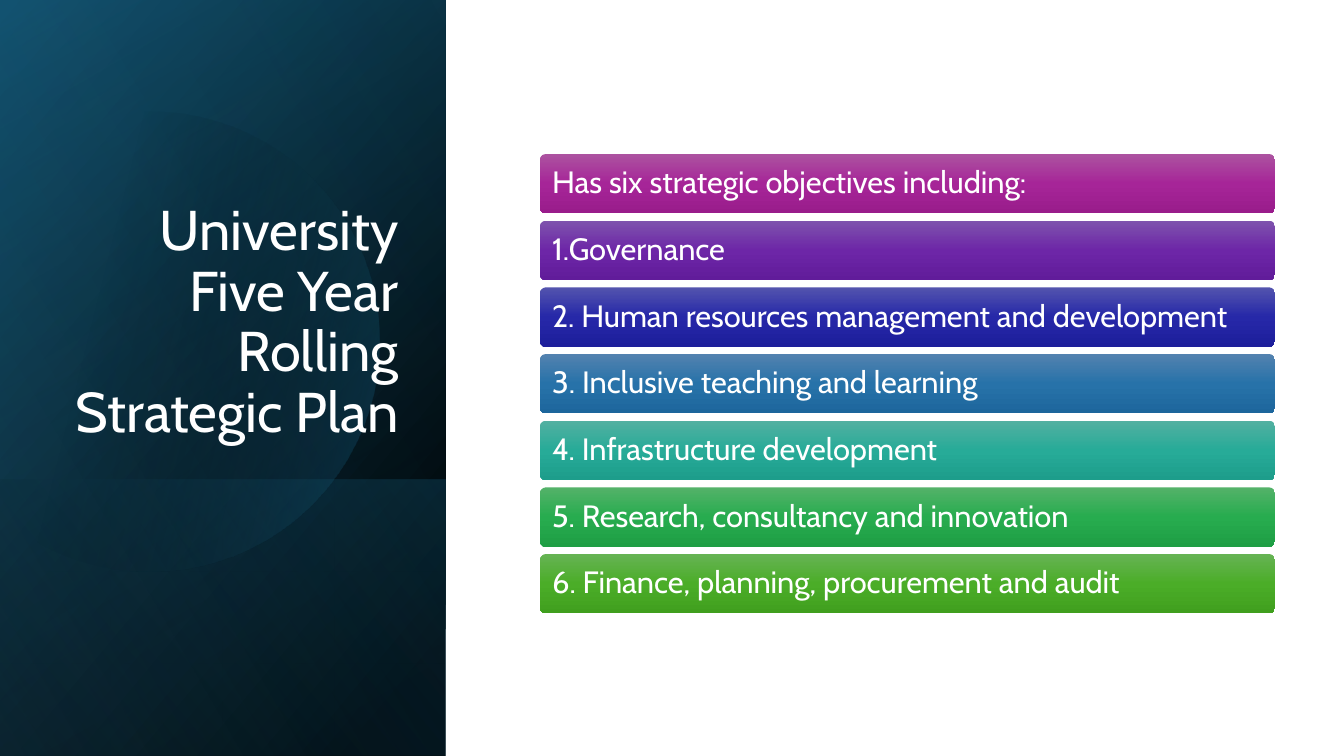
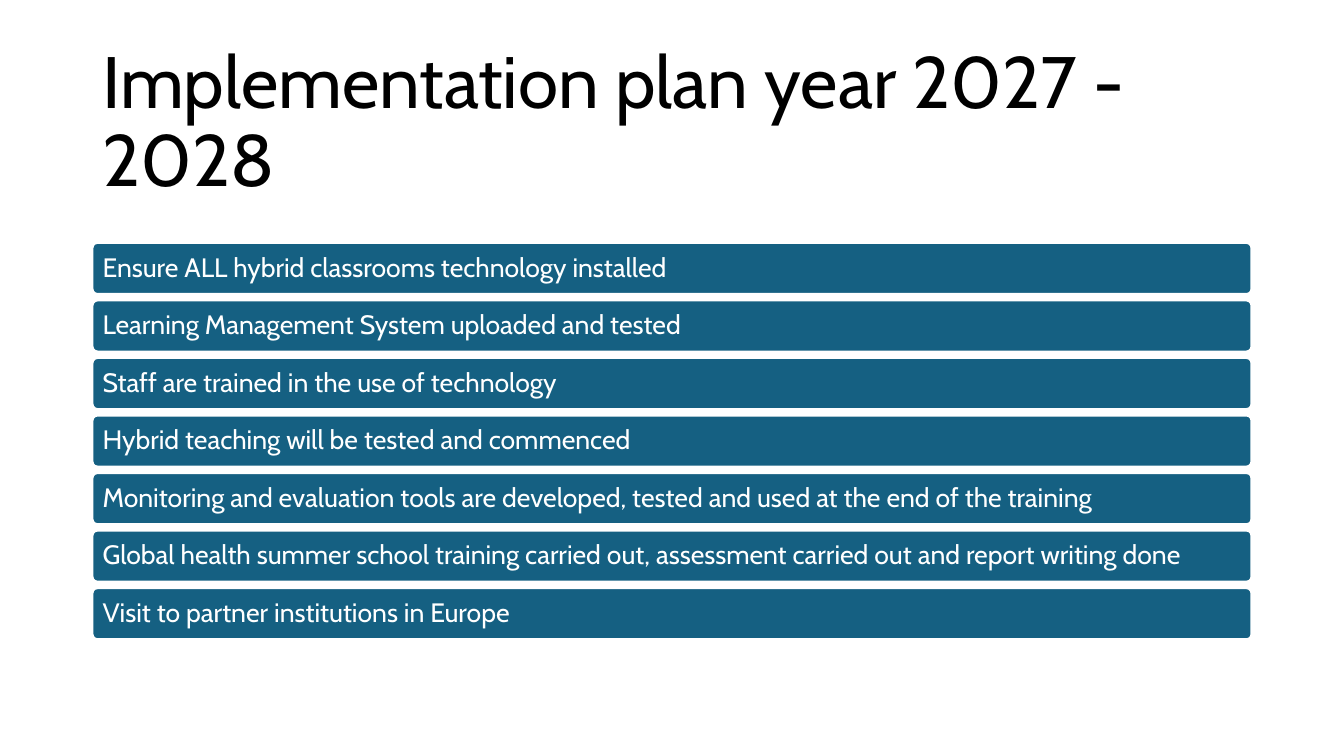
from dataclasses import dataclass
from math import acos, cos, sin
from typing import NamedTuple, Optional

from lxml.etree import SubElement
from pptx import Presentation
from pptx.dml.color import RGBColor
from pptx.enum.shapes import MSO_SHAPE as Preset
from pptx.enum.text import MSO_ANCHOR as Anchor, MSO_AUTO_SIZE as AutoSize, PP_ALIGN as Align
from pptx.oxml.ns import qn
from pptx.util import Cm, Pt


# Theme
@dataclass(frozen=True)
class Theme:
    font: str = "Cabin"
    white: str = "FFFFFF"
    black: str = "000000"
    teal: str = "156082"
    deep_teal: str = "104862"
    sky: str = "46B1E1"
    panel_title_size: int = 40
    wide_title_size: int = 52
    objective_size: int = 22
    task_size: int = 19
    line_spacing: float = 0.9
    bar_outline: float = 1.5
    corner: float = 0.1


THEME = Theme()


class Frame(NamedTuple):
    """Left, top, width and height in centimetres."""
    left: float
    top: float
    width: float
    height: float


class Stop(NamedTuple):
    position: int
    color: str
    opacity: int = 100


class Gradient(NamedTuple):
    angle: float
    stops: tuple[Stop, ...]


class Bar(NamedTuple):
    text: str
    gradient: Optional[Gradient] = None


class BarStack(NamedTuple):
    first: Frame
    pitch: float
    inset: float
    size: int
    bars: list[Bar]


def shade(top: str, middle: str, bottom: str) -> Gradient:
    return Gradient(90, (Stop(0, top), Stop(50, middle), Stop(100, bottom)))


# Content
OBJECTIVES = BarStack(Frame(13.61, 3.88, 18.52, 1.5), 1.68, 0.26, THEME.objective_size, [
    Bar("Has six strategic objectives including:", shade("AC53A0", "A62598", "991C8B")),
    Bar("1.Governance", shade("7E53AD", "6D26A7", "611C9A")),
    Bar("2. Human resources management and development", shade("5354AE", "2628A8", "1D1E9B")),
    Bar("3. Inclusive teaching and learning", shade("5382AF", "2772A9", "1D669C")),
    Bar("4. Infrastructure development", shade("53B0A1", "27AB98", "1D9D8B")),
    Bar("5. Research, consultancy and innovation", shade("54B269", "27AC4F", "1E9E44")),
    Bar("6. Finance, planning, procurement and audit", shade("66B354", "4BAD28", "409F1E")),
])

TASKS = BarStack(Frame(2.33, 6.12, 29.21, 1.29), 1.45, 0.22, THEME.task_size, [
    Bar("Ensure ALL hybrid classrooms technology installed"),
    Bar("Learning Management System uploaded and tested"),
    Bar("Staff are trained in the use of technology"),
    Bar("Hybrid teaching will be tested and commenced"),
    Bar("Monitoring and evaluation tools are developed, tested and used at the end of the training"),
    Bar("Global health summer school training carried out, assessment carried out and report writing done"),
    Bar("Visit to partner institutions in Europe"),
])

# Side panel: full height, with a darker foot
PANEL = Frame(0, 0, 11.23, 19.05)
FOOT = Frame(0, 12.09, 11.23, 6.96)
BASE = Gradient(50, (Stop(8, THEME.black), Stop(100, THEME.deep_teal)))
GLOW = Gradient(30, (Stop(0, THEME.black, 0), Stop(99, THEME.teal, 46)))
FOOT_SHADE = Gradient(130, (Stop(2, THEME.teal, 29), Stop(100, THEME.black, 30)))
DISC_SHADE = Gradient(14, (Stop(29, THEME.black, 0), Stop(100, THEME.teal, 43)))
SHEEN = Gradient(120, (Stop(0, THEME.black, 0), Stop(99, THEME.sky, 11)))


# Drawing helpers
def cm_frame(frame: Frame) -> list[Cm]:
    return [Cm(length) for length in frame]


def fill_gradient(shape, gradient: Gradient) -> None:
    shape.fill.gradient()
    fill = shape.element.spPr.find(qn("a:gradFill"))
    for child in list(fill):
        fill.remove(child)
    fill.set("rotWithShape", "1")
    stop_list = SubElement(fill, qn("a:gsLst"))
    for stop in gradient.stops:
        entry = SubElement(stop_list, qn("a:gs"), pos=str(stop.position * 1000))
        color = SubElement(entry, qn("a:srgbClr"), val=stop.color)
        if stop.opacity < 100:
            SubElement(color, qn("a:alpha"), val=str(stop.opacity * 1000))
    SubElement(fill, qn("a:lin"), ang=str(round(gradient.angle * 60000)), scaled="0")


def finish_plain(shape, gradient: Gradient) -> None:
    shape.shadow.inherit = False
    shape.line.fill.background()
    fill_gradient(shape, gradient)


def add_turned_layer(page, frame: Frame, gradient: Gradient) -> None:
    """Cover the frame with a mirrored rectangle turned by a quarter."""
    shift = (frame.width - frame.height) / 2
    turned = Frame(frame.left + shift, frame.top - shift, frame.height, frame.width)
    layer = page.shapes.add_shape(Preset.RECTANGLE, *cm_frame(turned))
    layer.rotation = 90
    layer.element.spPr.find(qn("a:xfrm")).set("flipH", "1")
    finish_plain(layer, gradient)


def add_cut_disc(page, center_x: float, center_y: float, radius: float,
                 gradient: Gradient, steps: int = 90) -> None:
    """Draw a disc cut off at the left edge of the slide."""
    limit = acos(-center_x / radius)
    angles = [limit * (2 * step / steps - 1) for step in range(steps + 1)]
    points = [(Cm(center_x + radius * cos(angle)), Cm(center_y + radius * sin(angle)))
              for angle in angles]
    builder = page.shapes.build_freeform(*points[0])
    builder.add_line_segments(points[1:], close=True)
    finish_plain(builder.convert_to_shape(), gradient)


def write_text(shape, text: str, size: int, color: str, align: Align, anchor: Anchor) -> None:
    text_frame = shape.text_frame
    text_frame.text = text
    text_frame.word_wrap = True
    text_frame.auto_size = AutoSize.NONE
    text_frame.vertical_anchor = anchor
    para = text_frame.paragraphs[0]
    para.alignment = align
    para.line_spacing = THEME.line_spacing
    for span in para.runs:
        span.font.name = THEME.font
        span.font.size = Pt(size)
        span.font.color.rgb = RGBColor.from_string(color)


def add_title(page, frame: Frame, text: str, size: int, color: str,
              align: Align = Align.LEFT, anchor: Anchor = Anchor.MIDDLE) -> None:
    box = page.shapes.add_textbox(*cm_frame(frame))
    write_text(box, text, size, color, align, anchor)


def add_bars(page, stack: BarStack) -> None:
    for index, bar in enumerate(stack.bars):
        frame = stack.first._replace(top=stack.first.top + index * stack.pitch)
        box = page.shapes.add_shape(Preset.ROUNDED_RECTANGLE, *cm_frame(frame))
        box.adjustments[0] = THEME.corner
        if bar.gradient:
            finish_plain(box, bar.gradient)
        else:
            box.shadow.inherit = False
            box.fill.solid()
            box.fill.fore_color.rgb = RGBColor.from_string(THEME.teal)
            box.line.color.rgb = RGBColor.from_string(THEME.white)
            box.line.width = Pt(THEME.bar_outline)
        write_text(box, bar.text, stack.size, THEME.white, Align.LEFT, Anchor.MIDDLE)
        box.text_frame.margin_left = box.text_frame.margin_right = Cm(stack.inset)
        box.text_frame.margin_top = box.text_frame.margin_bottom = Cm(0)


# Slides
def build_objectives(page) -> None:
    add_turned_layer(page, PANEL, BASE)
    add_turned_layer(page, PANEL, GLOW)
    add_turned_layer(page, FOOT, FOOT_SHADE)
    add_cut_disc(page, 3.78, 8.61, 5.79, DISC_SHADE)
    add_turned_layer(page, PANEL, SHEEN)
    add_title(page, Frame(1.63, 4.67, 8.66, 6.65), "University Five Year Rolling Strategic Plan",
              THEME.panel_title_size, THEME.white, Align.RIGHT, Anchor.BOTTOM)
    add_bars(page, OBJECTIVES)


def build_tasks(page) -> None:
    add_title(page, Frame(2.33, 1.55, 29.21, 3.15), "Implementation plan year 2027 - 2028",
              THEME.wide_title_size, THEME.black)
    add_bars(page, TASKS)


def main() -> None:
    deck = Presentation()
    deck.slide_width, deck.slide_height = Cm(33.87), Cm(19.05)
    blank = deck.slide_layouts[6]
    for build in (build_objectives, build_tasks):
        build(deck.slides.add_slide(blank))
    deck.save("out.pptx")


if __name__ == "__main__":
    main()
